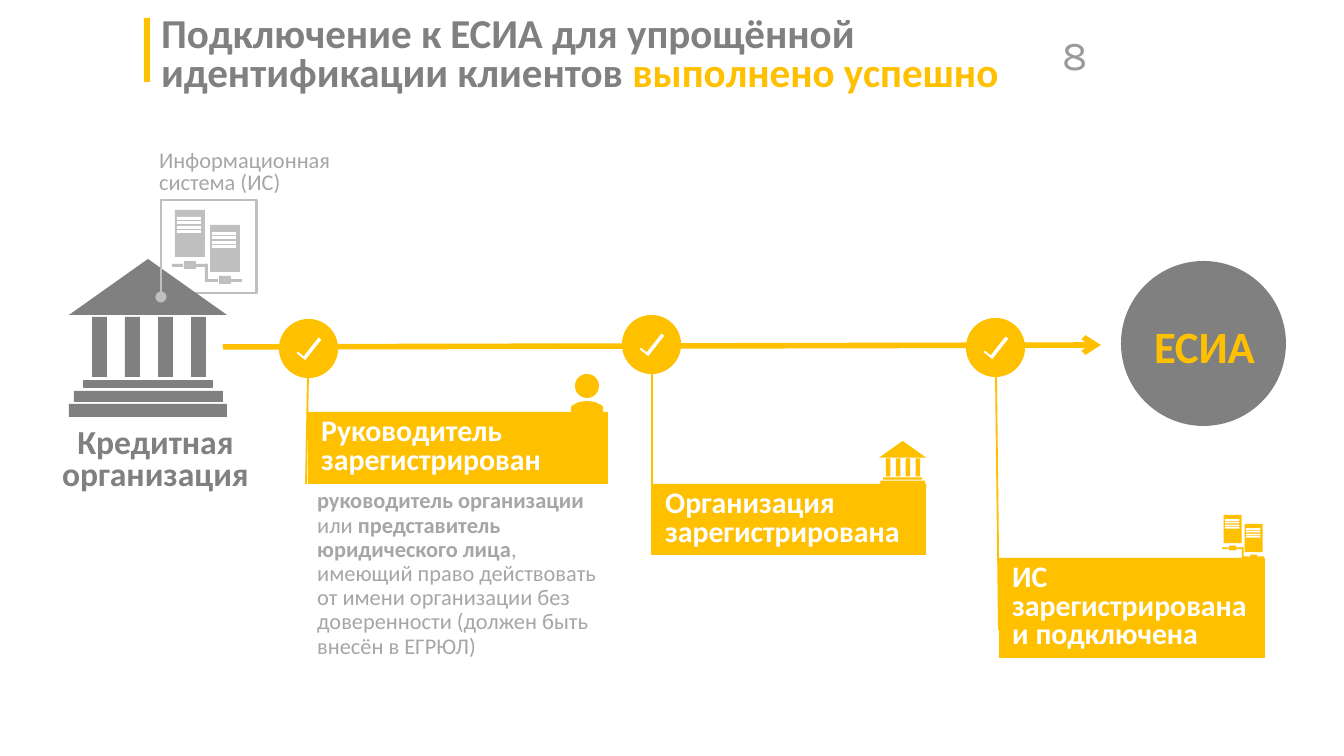
from lxml.etree import SubElement as Sub
from pptx import Presentation
from pptx.dml.color import RGBColor
from pptx.enum.shapes import MSO_CONNECTOR as Link, MSO_SHAPE as Kind
from pptx.enum.text import MSO_ANCHOR as Anchor, MSO_AUTO_SIZE as Auto, PP_ALIGN as Align
from pptx.oxml.ns import qn
from pptx.util import Pt

PX = 914400 / 134.4
GOLD = RGBColor(0xFF, 0xC0, 0x00)
DARK = RGBColor(0x80, 0x80, 0x80)
MID = RGBColor(0xA6, 0xA6, 0xA6)
PALE = RGBColor(0xBF, 0xBF, 0xBF)
ASH = RGBColor(0x9A, 0x9A, 0x9A)
WHITE = RGBColor(0xFF, 0xFF, 0xFF)

deck = Presentation()
deck.slide_width, deck.slide_height = round(1344 * PX), round(756 * PX)
slide = deck.slides.add_slide(deck.slide_layouts[5])
shapes = slide.shapes


def draw(kind, box, fill=None, edge=None, wide=2.25):
    shape = shapes.add_shape(kind, *[round(n * PX) for n in box])
    shape.shadow.inherit = False
    if fill is None:
        shape.fill.background()
    else:
        shape.fill.solid()
        shape.fill.fore_color.rgb = fill
    if edge is None:
        shape.line.fill.background()
    else:
        shape.line.color.rgb = edge
        shape.line.width = Pt(wide)
    return shape


def write(shape, paras, size, space=None, align=Align.LEFT, name="Calibri", frame=None):
    form = {"word_wrap": True, "auto_size": Auto.NONE, "vertical_anchor": Anchor.TOP}
    for key, val in {**form, **(frame or {})}.items():
        setattr(shape.text_frame, key, val)
    for i, runs in enumerate(paras):
        para = shape.text_frame.paragraphs[0] if i == 0 else shape.text_frame.add_paragraph()
        para.alignment = align
        para.line_spacing = space
        for text, color, bold in runs:
            run = para.add_run()
            run.text = text
            for key, val in {"size": Pt(size), "name": name, "bold": bold}.items():
                setattr(run.font, key, val)
            run.font.color.rgb = color


draw(Kind.RECTANGLE, (144, 18, 6, 64), GOLD)
title = shapes.title
for key, val in {"left": 148, "top": 13, "width": 868, "height": 80}.items():
    setattr(title, key, round(val * PX))
inset = {"margin_left": 13, "margin_top": 13, "margin_right": 13, "margin_bottom": 7}
write(title, [[("Подключение к ЕСИА для упрощённой идентификации клиентов ", DARK, True),
               ("выполнено успешно", GOLD, True)]], 22, 0.8,
      frame={"vertical_anchor": Anchor.MIDDLE,
             **{key: round(val * PX) for key, val in inset.items()}})

draw(Kind.RECTANGLE, (161, 200, 96, 93), edge=PALE, wide=1.5)

tower = [((3, 0, 30, 47), False)]
tower += [((5, y, 24, 3), True) for y in (7, 11, 16, 20)]
tower += [((24, 54, 11, 3), False), ((12, 51, 12, 8), False), ((0, 54, 11, 3), False)]
rack = [((x + dx, y + dy, w, h), slot) for dx, dy in ((0, 0), (35, 15))
        for (x, y, w, h), slot in tower]
rack.append(((33, 54, 3, 18), False))
bank = [(Kind.RECTANGLE, (0, 145, 158, 13)), (Kind.RECTANGLE, (5, 132, 149, 11)),
        (Kind.RECTANGLE, (14, 121, 130, 8)), (Kind.ISOSCELES_TRIANGLE, (0, 0, 158, 56))]
bank += [(Kind.RECTANGLE, (23 + 33 * i, 58, 15, 60)) for i in range(4)]

for left, top, zoom, color in ((172, 210, 1, PALE), (1222, 515, 0.6, GOLD)):
    for (x, y, w, h), slot in rack:
        draw(Kind.RECTANGLE, (left + x * zoom, top + y * zoom, w * zoom, h * zoom),
             WHITE if slot else color)

for left, top, zoom, color in ((69, 259, 1, DARK), (879, 441, 0.3, GOLD)):
    for kind, (x, y, w, h) in bank:
        draw(kind, (left + x * zoom, top + y * zoom, w * zoom, h * zoom), color)

draw(Kind.OVAL, (1121, 261, 165, 165), DARK)

steps = [((308, 412, 300, 72), "Руководитель зарегистрирован"),
         ((652, 484, 274, 71), "Организация зарегистрирована"),
         ((999, 558, 266, 100), "ИС зарегистрирована и подключена")]
for box, text in steps:
    write(draw(Kind.RECTANGLE, box, GOLD), [[(text, WHITE, True)]], 16, 0.8)

lines = [((161, 247, 161, 297), PALE, 1.5, "oval"),
         ((223, 347, 1101, 345), GOLD, 3, "arrow"),
         ((306, 484, 308, 378), GOLD, 1, None),
         ((652, 555, 652, 374), GOLD, 1, None),
         ((999, 630, 996, 375), GOLD, 1, None)]
for ends, color, wide, tip in lines:
    line = shapes.add_connector(Link.STRAIGHT, *[round(n * PX) for n in ends])
    line.line.color.rgb = color
    line.line.width = Pt(wide)
    props = line.element.spPr
    if tip:
        Sub(props.find(qn("a:ln")), qn("a:tailEnd")).set("type", tip)
    Sub(props, qn("a:effectLst"))

for x, y in ((281, 321), (624, 317), (968, 320)):
    draw(Kind.OVAL, (x, y, 55, 55), GOLD, GOLD)
    tick = draw(Kind.CORNER, (x + 15, y + 20, 26, 11), WHITE)
    tick.rotation = 308.2
    tick.adjustments[0], tick.adjustments[1] = 0.32, 0.18

draw(Kind.OVAL, (575, 374, 24, 24), GOLD)
pen = shapes.build_freeform(571, 413, scale=PX)
pen.add_line_segments([(571, 407), (573, 405), (579, 402), (587, 401),
                       (595, 402), (601, 405), (603, 407), (603, 413)])
torso = pen.convert_to_shape()
torso.shadow.inherit = False
torso.fill.solid()
torso.fill.fore_color.rgb = GOLD
torso.line.fill.background()

loose = {"word_wrap": False}
notes = [
    ((48, 422, 215, 79), [[("Кредитная", DARK, True)], [("организация", DARK, True)]],
     18, 0.8, Align.CENTER, "Calibri", loose),
    ((146, 145, 200, 58), [[("Информационная", MID, False)], [("система (ИС)", MID, False)]],
     12, 0.8, Align.LEFT, "Calibri", loose),
    ((1021, 23, 80, 59), [[("8", ASH, False)]], 22, None, Align.RIGHT, "Karla", {}),
    ((1126, 312, 157, 82), [[("ЕСИА", GOLD, True)]], 24, None, Align.CENTER, "Calibri", loose),
    ((304, 483, 321, 184),
     [[("руководитель организации", MID, True)],
      [("или ", MID, False), ("представитель юридического лица", MID, True),
       (", имеющий право действовать от имени организации без доверенности "
        "(должен быть внесён в ЕГРЮЛ)", MID, False)]],
     12, 0.9, Align.LEFT, "Calibri", {}),
]
for box, *rest in notes:
    write(shapes.add_textbox(*[round(n * PX) for n in box]), *rest)

deck.save("out.pptx")
